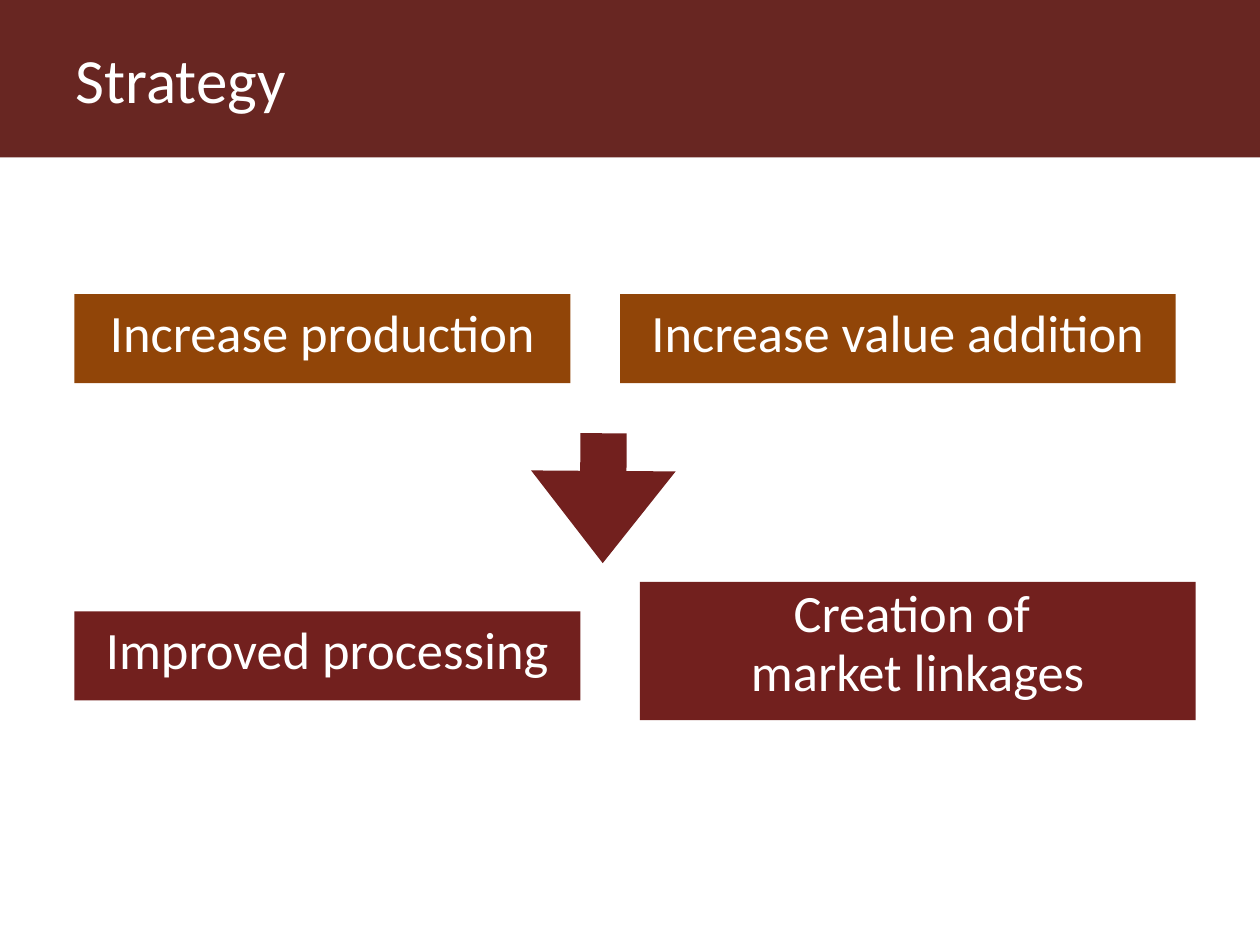
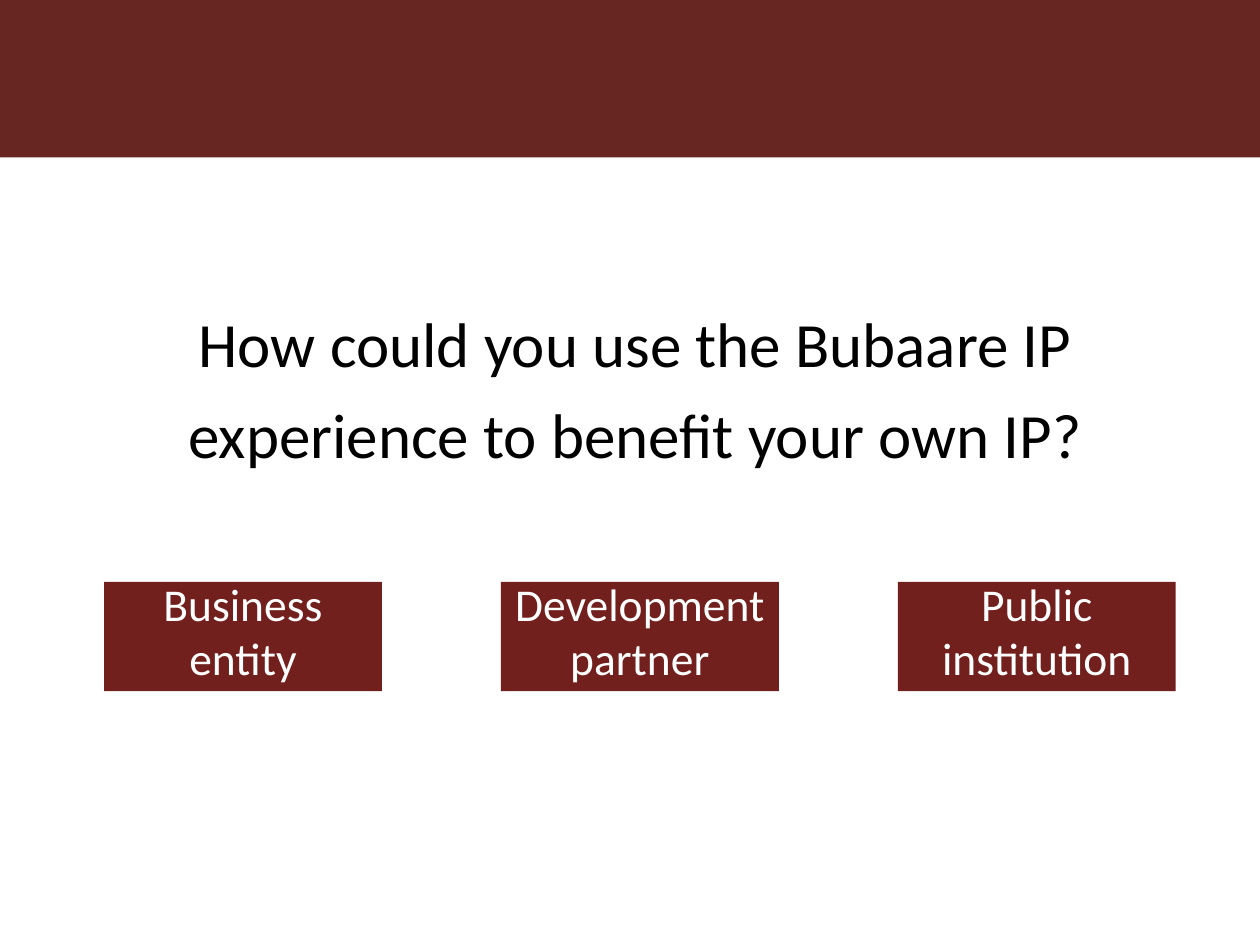
from pptx import Presentation
from pptx.dml.color import RGBColor
from pptx.enum.shapes import MSO_SHAPE
from pptx.enum.text import MSO_ANCHOR, PP_ALIGN
from pptx.util import Pt

FONT = "Calibri"
BAND, BROWN, MAROON = "682622", "914508", "72201E"
WHITE, BLACK = "FFFFFF", "000000"
SLIDE_WIDTH, SLIDE_HEIGHT, BAND_HEIGHT = 720, 540, 90
TITLE_LAYOUT, BLANK_LAYOUT = 5, 6


def color(hex_string):
    return RGBColor.from_string(hex_string)


def add_filled_shape(slide, kind, left, top, width, height, fill):
    shape = slide.shapes.add_shape(kind, Pt(left), Pt(top), Pt(width), Pt(height))
    shape.shadow.inherit = False
    shape.fill.solid()
    shape.fill.fore_color.rgb = color(fill)
    shape.line.fill.background()
    return shape


def write_text(shape, lines, size, text_color=WHITE, align=PP_ALIGN.CENTER,
               anchor=MSO_ANCHOR.TOP, space_after=12, line_spacing=None):
    frame = shape.text_frame
    frame.word_wrap = True
    frame.vertical_anchor = anchor
    for index, line in enumerate(lines):
        paragraph = frame.add_paragraph() if index else frame.paragraphs[0]
        paragraph.alignment = align
        paragraph.space_after = Pt(space_after)
        if line_spacing:
            paragraph.line_spacing = line_spacing
        run = paragraph.add_run()
        run.text = line
        run.font.name = FONT
        run.font.size = Pt(size)
        run.font.color.rgb = color(text_color)


def add_label(slide, left, top, width, height, fill, lines, size, **text_style):
    box = add_filled_shape(slide, MSO_SHAPE.RECTANGLE, left, top, width, height, fill)
    write_text(box, lines, size, **text_style)


def add_banded_slide(presentation, layout):
    """Add a slide whose top band lies behind everything else."""
    slide = presentation.slides.add_slide(presentation.slide_layouts[layout])
    band = add_filled_shape(slide, MSO_SHAPE.RECTANGLE, 0, 0,
                            SLIDE_WIDTH, BAND_HEIGHT, BAND)
    slide.shapes._spTree.insert(2, band._element)
    return slide


def set_title(slide, text):
    title = slide.shapes.title
    title.left, title.top = Pt(36), Pt(0)
    title.width, title.height = Pt(648), Pt(BAND_HEIGHT)
    write_text(title, [text], 36, align=PP_ALIGN.LEFT,
               anchor=MSO_ANCHOR.MIDDLE, space_after=0)


def add_down_arrow(slide, left, top, width, height, fill):
    arrow = add_filled_shape(slide, MSO_SHAPE.DOWN_ARROW, left, top, width, height, fill)
    arrow.adjustments[0] = 0.32
    arrow.adjustments[1] = 0.71
    arrow.rotation = 0.4


def build_strategy(presentation):
    slide = add_banded_slide(presentation, TITLE_LAYOUT)
    set_title(slide, "Strategy")
    left, goal_top, label_height = 42.5, 168, 51
    add_label(slide, left, goal_top, 283.5, label_height, BROWN,
              ["Increase production"], 30)
    add_label(slide, 354.3, goal_top, 317.5, label_height, BROWN,
              ["Increase value addition"], 30)
    add_label(slide, left, 349.3, 289.2, label_height, MAROON,
              ["Improved processing"], 30)
    add_label(slide, 365.7, 332.5, 317.5, 79, MAROON,
              ["Creation of ", "market linkages"], 30,
              anchor=MSO_ANCHOR.MIDDLE, line_spacing=0.6)
    add_down_arrow(slide, 303.4, 247.6, 82.6, 74.2, MAROON)


def build_question(presentation):
    slide = add_banded_slide(presentation, BLANK_LAYOUT)
    left, label_height = 59.5, 62.4
    question = slide.shapes.add_textbox(Pt(left), Pt(162), Pt(607), Pt(label_height))
    write_text(question,
               ["How could you use the Bubaare IP experience to benefit your own IP?"],
               36, text_color=BLACK, line_spacing=1.2)
    audiences = ["Business entity", "Development partner", "Public institution"]
    for index, audience in enumerate(audiences):
        add_label(slide, left + index * 226.8, 332.5, 158.8, label_height, MAROON,
                  [audience], 26, anchor=MSO_ANCHOR.BOTTOM)


def main():
    presentation = Presentation()
    presentation.slide_width = Pt(SLIDE_WIDTH)
    presentation.slide_height = Pt(SLIDE_HEIGHT)
    build_strategy(presentation)
    build_question(presentation)
    presentation.save("out.pptx")


if __name__ == "__main__":
    main()
